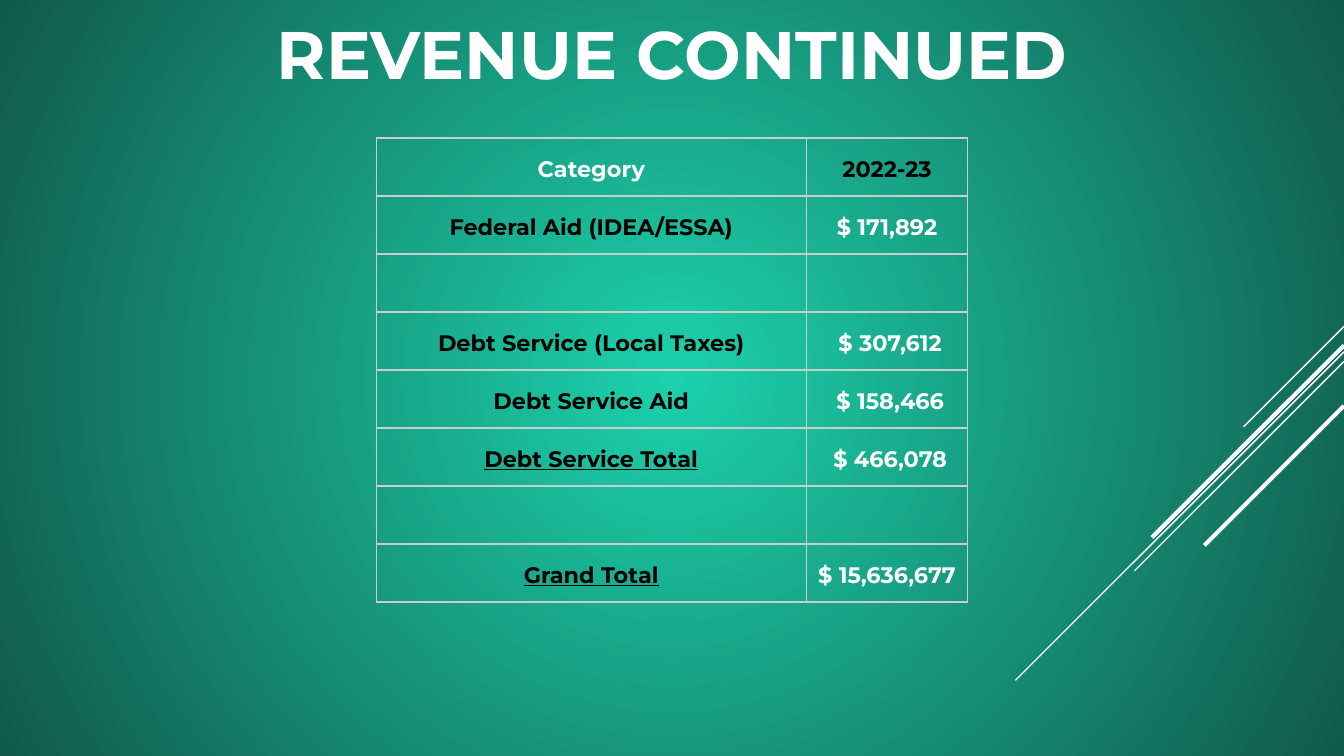
from pptx import Presentation
from pptx.dml.color import RGBColor
from pptx.enum.shapes import MSO_CONNECTOR
from pptx.enum.text import MSO_ANCHOR, PP_ALIGN
from pptx.oxml import parse_xml
from pptx.oxml.ns import nsdecls, qn
from pptx.util import Cm, Pt

STRAIGHT = MSO_CONNECTOR.STRAIGHT
BOTTOM, MIDDLE = MSO_ANCHOR.BOTTOM, MSO_ANCHOR.MIDDLE
CENTER = PP_ALIGN.CENTER

TITLE = "REVENUE CONTINUED"
ROWS = [
    ("Category", "2022-23"),
    ("Federal Aid (IDEA/ESSA)", "$ 171,892"),
    ("", ""),
    ("Debt Service (Local Taxes)", " $ 307,612"),
    ("Debt Service Aid", " $ 158,466"),
    ("Debt Service Total", " $ 466,078"),
    ("", ""),
    ("Grand Total", " $ 15,636,677 "),
]
# (height at right edge, diagonal run, weight)
STRIPES = [
    (6.17, 1.9, "thin"),
    (6.65, 6.21, "thin"),
    (6.83, 3.96, "thin"),
    (6.53, 3.63, "thick"),
    (7.67, 2.64, "thick"),
]
THEME = {
    "font": "Montserrat",
    "light": RGBColor(0xFF, 0xFF, 0xFF),
    "dark": RGBColor(0, 0, 0),
    "border": "CCCCCC",
    "glow": RGBColor(0x1C, 0xD1, 0xAC),
    "edge": RGBColor(0x11, 0x59, 0x4B),
    "title": Pt(36),
    "cell": Pt(12),
    "thin": Pt(0.75),
    "thick": Pt(2.25),
}
SLIDE_W, SLIDE_H = Cm(25.4), Cm(14.29)
COL_W = [Cm(8.13), Cm(3.05)]
TABLE_TOP, TABLE_H = Cm(2.61), Cm(8.77)
TITLE_W, TITLE_H = Cm(18.8), Cm(1.75)


def set_all(obj, values):
    for name, value in values.items():
        setattr(obj, name, value)


def write(tf, text, size, color, underline=False, spacing=1.0):
    p = tf.paragraphs[0]
    set_all(p, {"alignment": CENTER, "line_spacing": spacing})
    r = p.add_run()
    r.text = text
    set_all(r.font, {"name": THEME["font"], "size": size,
                     "bold": True, "underline": underline})
    r.font.color.rgb = color


def paint_background(s):
    fill = s.background.fill
    fill.gradient()
    for stop, key in zip(fill.gradient_stops, ("glow", "edge")):
        stop.color.rgb = THEME[key]
    grad = s.element.find(".//" + qn("a:gradFill"))
    grad.remove(grad.find(qn("a:lin")))
    grad.append(parse_xml(
        f'<a:path {nsdecls("a")} path="circle">'
        '<a:fillToRect l="50000" t="50000" r="50000" b="50000"/></a:path>'))


def add_stripe(s, top, run, weight):
    line = s.shapes.add_connector(
        STRAIGHT, SLIDE_W, Cm(top), SLIDE_W - Cm(run), Cm(top + run))
    line.line.color.rgb = THEME["light"]
    line.line.width = THEME[weight]
    line.element.spPr.append(parse_xml(f'<a:effectLst {nsdecls("a")}/>'))


def add_title(s):
    sp = s.shapes.add_textbox((SLIDE_W - TITLE_W) // 2, 0, TITLE_W, TITLE_H)
    tf = sp.text_frame
    set_all(tf, {"word_wrap": True, "vertical_anchor": BOTTOM,
                 "margin_left": 0, "margin_right": 0,
                 "margin_top": 0, "margin_bottom": 0})
    write(tf, TITLE, THEME["title"], THEME["light"])


def set_borders(cell):
    tc_pr = cell._tc.get_or_add_tcPr()
    for i, side in enumerate(("lnL", "lnR", "lnT", "lnB")):
        tc_pr.insert(i, parse_xml(
            f'<a:{side} {nsdecls("a")} w="{THEME["thin"]}"><a:solidFill>'
            f'<a:srgbClr val="{THEME["border"]}"/></a:solidFill></a:{side}>'))


def add_revenue_table(s):
    width = sum(COL_W)
    table = s.shapes.add_table(
        len(ROWS), len(COL_W), (SLIDE_W - width) // 2, TABLE_TOP,
        width, TABLE_H).table
    set_all(table, {"first_row": False, "horz_banding": False})
    for column, w in zip(table.columns, COL_W):
        column.width = w
    for i, row in enumerate(ROWS):
        for j, text in enumerate(row):
            cell = table.cell(i, j)
            cell.fill.background()
            set_borders(cell)
            if not text:
                continue
            header = i == j == 0
            set_all(cell, {
                "vertical_anchor": BOTTOM if header else MIDDLE,
                "margin_left": Cm(0.08), "margin_right": Cm(0.08),
                "margin_top": Cm(0.25), "margin_bottom": Cm(0.25)})
            dark = (i == 0) == (j == 1)
            write(cell.text_frame, text, THEME["cell"],
                  THEME["dark" if dark else "light"],
                  underline=text.endswith("Total"),
                  spacing=1.0 if header else 1.15)


def main():
    prs = Presentation()
    set_all(prs, {"slide_width": SLIDE_W, "slide_height": SLIDE_H})
    s = prs.slides.add_slide(prs.slide_layouts[6])
    paint_background(s)
    for stripe in STRIPES:
        add_stripe(s, *stripe)
    add_title(s)
    add_revenue_table(s)
    prs.save("out.pptx")


if __name__ == "__main__":
    main()
